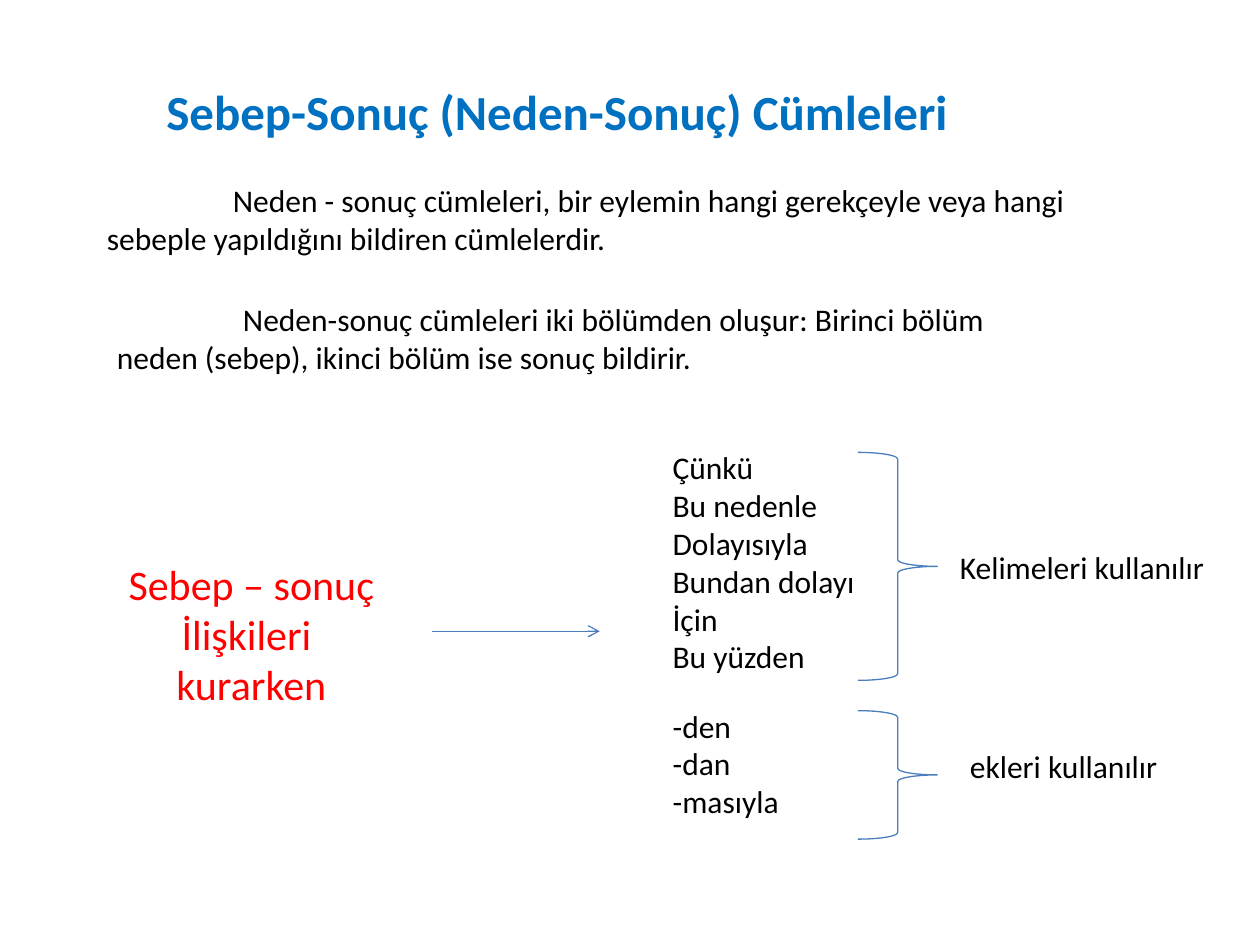
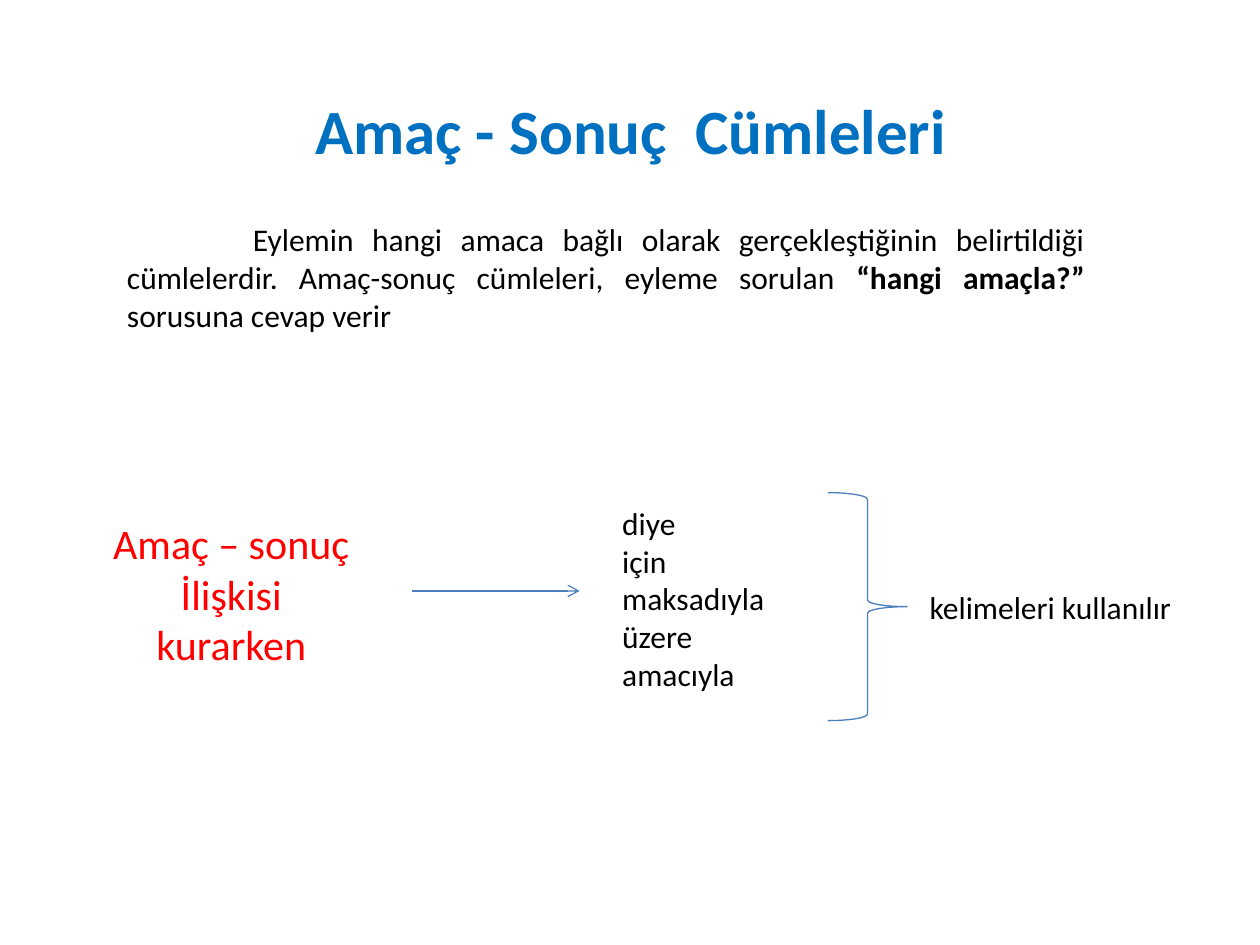
import pptx
import pptx.dml.color
import pptx.enum.shapes
import pptx.enum.text
import pptx.oxml
import pptx.oxml.ns
import pptx.util
from pptx.util import Inches

BLUE = pptx.dml.color.RGBColor(0x00, 0x70, 0xC0)
RED = pptx.dml.color.RGBColor(0xFF, 0x00, 0x00)
BLACK = pptx.dml.color.RGBColor(0x00, 0x00, 0x00)
LINE = pptx.dml.color.RGBColor(0x4B, 0x7E, 0xBC)
ALIGN = pptx.enum.text.PP_ALIGN
TITLE_ONLY = 5


class LessonDeck:
    font = "Calibri"
    body_size = 18
    relation_size = 24
    line_width = 0.75
    brace_width = 0.63

    def __init__(self):
        self.presentation = pptx.Presentation()
        self.presentation.slide_width = Inches(10)
        self.presentation.slide_height = Inches(7.5)
        self.slide = None

    def format_text(self, shape, size, color, align=ALIGN.LEFT, bold=False):
        for paragraph in shape.text_frame.paragraphs:
            paragraph.alignment = align
            for run in paragraph.runs:
                run.font.name = self.font
                run.font.size = pptx.util.Pt(size)
                run.font.color.rgb = color
                run.font.bold = bold

    def add_slide(self, title, left, top, width, height, size):
        layout = self.presentation.slide_layouts[TITLE_ONLY]
        self.slide = self.presentation.slides.add_slide(layout)
        shape = self.slide.shapes.title
        shape.left, shape.top = Inches(left), Inches(top)
        shape.width, shape.height = Inches(width), Inches(height)
        frame = shape.text_frame
        frame.text = title
        frame.word_wrap = False
        frame.auto_size = pptx.enum.text.MSO_AUTO_SIZE.NONE
        frame.vertical_anchor = pptx.enum.text.MSO_ANCHOR.TOP
        self.format_text(shape, size, BLUE, bold=True)

    def add_text(self, text, left, top, width, height, size=body_size,
                 color=BLACK, align=ALIGN.LEFT, wrap=False):
        shape = self.slide.shapes.add_textbox(
            Inches(left), Inches(top), Inches(width), Inches(height))
        shape.text_frame.text = text
        shape.text_frame.word_wrap = wrap
        self.format_text(shape, size, color, align)
        return shape

    def add_definition(self, text, left, top, width, height,
                       align=ALIGN.LEFT, question="", ending=""):
        shape = self.add_text(text, left, top, width, height, wrap=True)
        paragraph = shape.text_frame.paragraphs[0]
        for part in (question, ending):
            if part:
                paragraph.add_run().text = part
        self.format_text(shape, self.body_size, BLACK, align)
        if question:
            paragraph.runs[1].font.bold = True
        properties = paragraph._p.get_or_add_pPr()
        properties.set("marL", "0")
        properties.set("indent", str(Inches(1)))

    def add_relation(self, lines, left, top, width):
        self.add_text("\n".join(lines), left, top, width, 1.31,
                      self.relation_size, RED, ALIGN.CENTER)

    def add_words(self, words, left, top, width):
        self.add_text("\n".join(words), left, top, width, 0.1 + 0.3 * len(words))

    def add_brace(self, left, top, height):
        shape = self.slide.shapes.add_shape(
            pptx.enum.shapes.MSO_SHAPE.RIGHT_BRACE, Inches(left), Inches(top),
            Inches(self.brace_width), Inches(height))
        shape.shadow.inherit = False
        shape.fill.background()
        self.format_line(shape.line)

    def add_arrow(self, left, top, length=1.33):
        connector = self.slide.shapes.add_connector(
            pptx.enum.shapes.MSO_CONNECTOR.STRAIGHT,
            Inches(left), Inches(top), Inches(left + length), Inches(top))
        self.format_line(connector.line)
        namespace = pptx.oxml.ns.nsdecls("a")
        connector.line._get_or_add_ln().append(
            pptx.oxml.parse_xml(f'<a:tailEnd {namespace} type="arrow"/>'))
        connector._element.spPr.append(
            pptx.oxml.parse_xml(f"<a:effectLst {namespace}/>"))

    def format_line(self, line):
        line.color.rgb = LINE
        line.width = pptx.util.Pt(self.line_width)


def add_cause_slide(deck):
    deck.add_slide("Sebep-Sonuç (Neden-Sonuç) Cümleleri", 1.22, 0.6, 6.47, 0.57, 28)
    deck.add_definition(
        "Neden - sonuç cümleleri, bir eylemin hangi gerekçeyle veya hangi "
        "sebeple yapıldığını bildiren cümlelerdir.", 0.75, 1.39, 7.95, 0.71)
    deck.add_definition(
        "Neden-sonuç cümleleri iki bölümden oluşur: Birinci bölüm neden (sebep), "
        "ikinci bölüm ise sonuç bildirir.", 0.83, 2.33, 7.72, 0.71)
    deck.add_relation(["Sebep – sonuç", "İlişkileri ", "kurarken"], 0.91, 4.38, 2.17)
    deck.add_arrow(3.43, 5.01)
    deck.add_words(["Çünkü", "Bu nedenle", "Dolayısıyla", "Bundan dolayı",
                    "İçin", "Bu yüzden"], 5.24, 3.51, 1.66)
    deck.add_words(["-den", "-dan", "-masıyla"], 5.24, 5.56, 1.05)
    deck.add_brace(6.81, 3.59, 1.81)
    deck.add_brace(6.81, 5.64, 1.02)
    deck.add_text("ekleri kullanılır", 7.6, 5.88, 1.7, 0.4)
    deck.add_text("Kelimeleri kullanılır", 7.52, 4.3, 2.16, 0.4)


def add_purpose_slide(deck):
    deck.add_slide("Amaç - Sonuç  Cümleleri", 2.4, 0.68, 5.26, 0.71, 36)
    deck.add_definition(
        "Eylemin hangi amaca bağlı olarak gerçekleştiğinin belirtildiği "
        "cümlelerdir. Amaç-sonuç cümleleri, eyleme sorulan ",
        0.91, 1.7, 7.8, 1.01, ALIGN.JUSTIFY,
        "“hangi amaçla?”", " sorusuna cevap verir")
    deck.add_relation(["Amaç – sonuç", "İlişkisi", "kurarken"], 0.79, 4.06, 2.09)
    deck.add_arrow(3.27, 4.69)
    deck.add_words(["diye", "için", "maksadıyla", "üzere", "amacıyla"],
                   4.84, 3.95, 1.34)
    deck.add_brace(6.57, 3.91, 1.81)
    deck.add_text("kelimeleri kullanılır", 7.28, 4.62, 2.14, 0.4)


def main():
    deck = LessonDeck()
    add_cause_slide(deck)
    add_purpose_slide(deck)
    deck.presentation.save("out.pptx")


if __name__ == "__main__":
    main()
